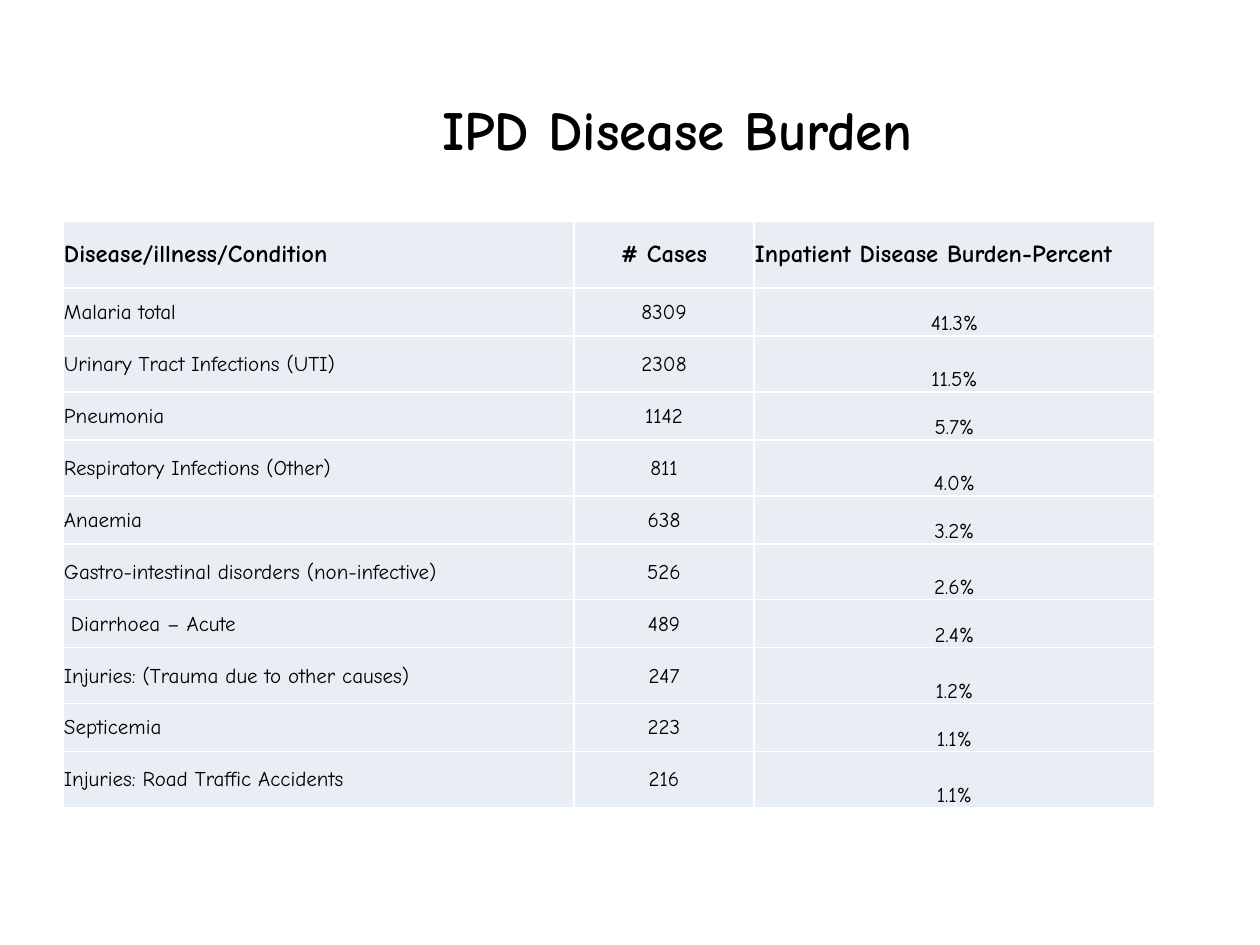
from pptx import Presentation
from pptx.dml.color import RGBColor
from pptx.enum.text import MSO_ANCHOR, PP_ALIGN
from pptx.oxml import parse_xml
from pptx.oxml.ns import nsdecls
from pptx.util import Pt

# Content
TITLE = "IPD Disease Burden"
HEAD = ("Disease/illness/Condition", "# Cases", "Inpatient Disease Burden-Percent")
ROWS = [
    ("Malaria total", "8309", "41.3%"),
    ("Urinary Tract Infections (UTI)", "2308", "11.5%"),
    ("Pneumonia", "1142", "5.7%"),
    ("Respiratory Infections (Other)", "811", "4.0%"),
    ("Anaemia", "638", "3.2%"),
    ("Gastro-intestinal disorders (non-infective)", "526", "2.6%"),
    (" Diarrhoea – Acute", "489", "2.4%"),
    ("Injuries: (Trauma due to other causes)", "247", "1.2%"),
    ("Septicemia", "223", "1.1%"),
    ("Injuries: Road Traffic Accidents", "216", "1.1%"),
]

# Style
FONT = "Comic Neue"
COLORS = {"text": "000000", "cell": "E9EDF4", "line": "FFFFFF", "page": "FFFFFF"}
LEFT, MID = PP_ALIGN.LEFT, PP_ALIGN.CENTER
WIDTHS = (511, 180, 401)
HEIGHTS = [67] + [48, 56] * (len(ROWS) // 2)


def px(n):
    return n * 914400 // 126


def color(name):
    return RGBColor.from_string(COLORS[name])


def write(frame, text, size, bold, align):
    frame.text = text
    para = frame.paragraphs[0]
    para.alignment = align
    font = para.runs[0].font
    font.name, font.size, font.bold = FONT, Pt(size), bold
    font.color.rgb = color("text")


def border(cell):
    props = cell._tc.get_or_add_tcPr()
    for i, side in enumerate(("lnL", "lnR", "lnT", "lnB")):
        props.insert(i, parse_xml(
            f'<a:{side} {nsdecls("a")} w="12700"><a:solidFill>'
            f'<a:srgbClr val="{COLORS["line"]}"/></a:solidFill></a:{side}>'))


deck = Presentation()
deck.slide_width, deck.slide_height = px(1260), px(945)
slide = deck.slides.add_slide(deck.slide_layouts[5])
slide.background.fill.solid()
slide.background.fill.fore_color.rgb = color("page")

# Title
title = slide.shapes.title
title.left, title.top, title.width, title.height = map(px, (147, 95, 1061, 67))
title.text_frame.vertical_anchor = MSO_ANCHOR.MIDDLE
write(title.text_frame, TITLE, 31.5, True, MID)

# Table
table = slide.shapes.add_table(
    len(HEIGHTS), len(WIDTHS), px(63), px(221),
    px(sum(WIDTHS)), px(sum(HEIGHTS))).table
table.first_row = table.horz_banding = False
for col, width in zip(table.columns, WIDTHS):
    col.width = px(width)
for r, (row, height) in enumerate(zip([HEAD] + ROWS, HEIGHTS)):
    table.rows[r].height = px(height)
    top = r == 0
    aligns = (LEFT, MID, LEFT if top else MID)
    for c, (text, align) in enumerate(zip(row, aligns)):
        cell = table.cell(r, c)
        cell.margin_left = cell.margin_right = cell.margin_top = px(1)
        cell.margin_bottom = 0
        low = c == 2 and not top
        cell.vertical_anchor = MSO_ANCHOR.BOTTOM if low else MSO_ANCHOR.MIDDLE
        cell.fill.solid()
        cell.fill.fore_color.rgb = color("cell")
        border(cell)
        write(cell.text_frame, text, 14 if top else 12, top, align)

deck.save("out.pptx")
